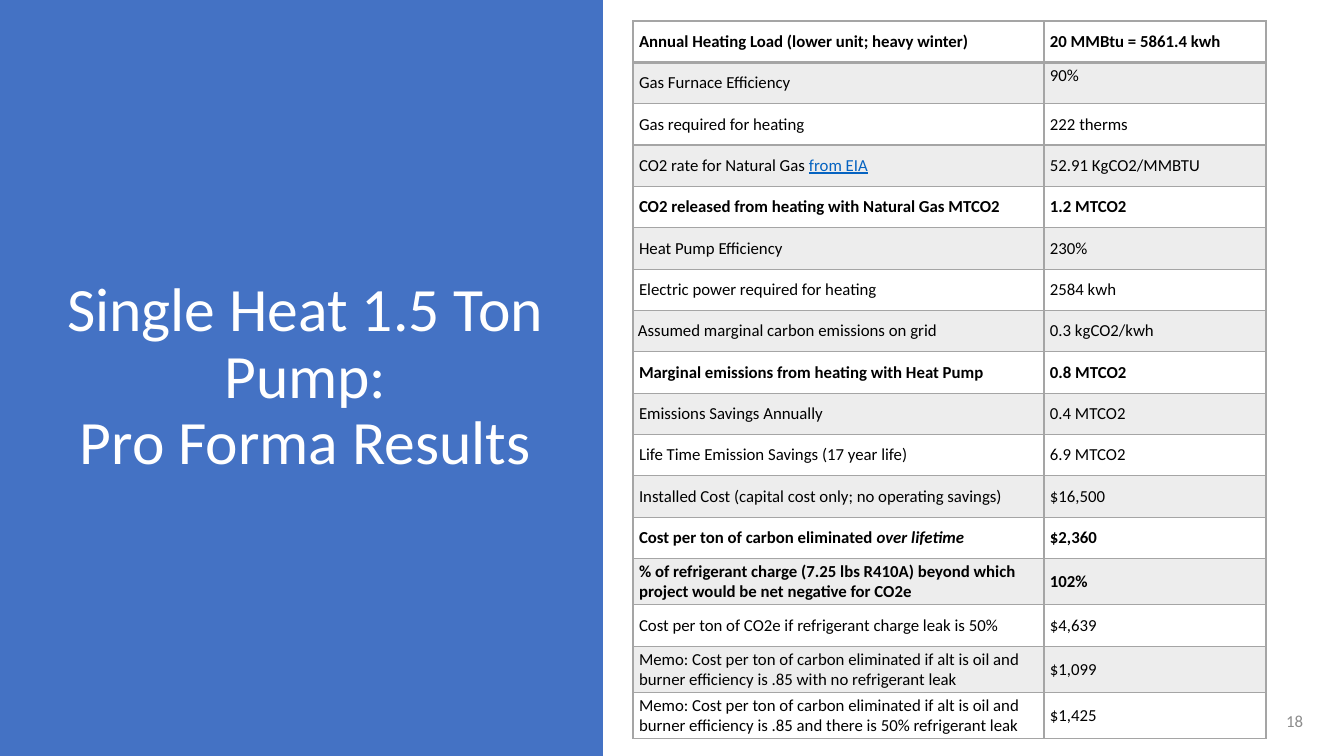
from dataclasses import dataclass

from lxml import etree
from pptx import Presentation
from pptx.dml.color import RGBColor
from pptx.enum.shapes import MSO_SHAPE
from pptx.enum.text import MSO_ANCHOR, PP_ALIGN
from pptx.oxml.ns import qn
from pptx.util import Emu, Pt

RECTANGLE = MSO_SHAPE.RECTANGLE
TOP, MIDDLE = MSO_ANCHOR.TOP, MSO_ANCHOR.MIDDLE
CENTER, RIGHT = PP_ALIGN.CENTER, PP_ALIGN.RIGHT
BLANK_LAYOUT = 6
EMU_PER_PX = 914400 / 100.8


@dataclass(frozen=True)
class Theme:
    font: str = "Calibri"
    panel: str = "4472C4"
    title: str = "FFFFFF"
    body: str = "000000"
    link: str = "0563C1"
    border: str = "A5A5A5"
    band: str = "EDEDED"
    page: str = "8C8C8C"
    title_size: int = 44
    body_size: int = 12


TITLE_LINES = ["Single Heat 1.5 Ton Pump:", "Pro Forma Results"]

# Each row: label runs as (text, style), value, bold
RESULTS = [
    ([("Annual Heating Load (lower unit; heavy winter)", "")], "20 MMBtu = 5861.4 kwh", True),
    ([("Gas Furnace Efficiency", "")], "90%", False),
    ([("Gas required for heating", "")], "222 therms", False),
    ([("CO2 rate for Natural Gas ", ""), ("from EIA", "link")], "52.91 KgCO2/MMBTU", False),
    ([("CO2 released from heating with Natural Gas MTCO2", "")], "1.2 MTCO2", True),
    ([("Heat Pump Efficiency", "")], "230%", False),
    ([("Electric power required for heating", "")], "2584 kwh", False),
    ([("Assumed marginal carbon emissions on grid", "")], "0.3 kgCO2/kwh", False),
    ([("Marginal emissions from heating with Heat Pump", "")], "0.8 MTCO2", True),
    ([("Emissions Savings Annually", "")], "0.4 MTCO2", False),
    ([("Life Time Emission Savings (17 year life)", "")], "6.9 MTCO2", False),
    ([("Installed Cost (capital cost only; no operating savings)", "")], "$16,500", False),
    ([("Cost per ton of carbon eliminated ", ""), ("over lifetime", "italic")], "$2,360", True),
    ([("% of refrigerant charge (7.25 lbs R410A) beyond which "
       "project would be net negative for CO2e", "")], "102%", True),
    ([("Cost per ton of CO2e if refrigerant charge leak is 50%", "")], "$4,639", False),
    ([("Memo: Cost per ton of carbon eliminated if alt is oil and "
       "burner efficiency is .85 with no refrigerant leak", "")], "$1,099", False),
    ([("Memo: Cost per ton of carbon eliminated if alt is oil and "
       "burner efficiency is .85 and there is 50% refrigerant leak", "")], "$1,425", False),
]
TOP_ALIGNED_VALUE_ROW = 1
TIGHT_LABEL_ROW = 7


def px(length):
    return Emu(round(length * EMU_PER_PX))


def set_attributes(target, values):
    for name, value in values.items():
        setattr(target, name, value)


class SlideBuilder:
    def __init__(self, slide, theme):
        self.slide = slide
        self.theme = theme

    def add_run(self, paragraph, text, size, color, **font_values):
        run = paragraph.add_run()
        run.text = text
        set_attributes(run.font, {"name": self.theme.font, "size": Pt(size), **font_values})
        run.font.color.rgb = RGBColor.from_string(color)

    def panel(self, left, top, width, height):
        shape = self.slide.shapes.add_shape(RECTANGLE, px(left), px(top), px(width), px(height))
        shape.shadow.inherit = False
        shape.fill.solid()
        shape.fill.fore_color.rgb = RGBColor.from_string(self.theme.panel)
        shape.line.fill.background()

    def text(self, box, lines, size, color, **paragraph_values):
        """Write one paragraph whose lines are split by line breaks."""
        frame = self.slide.shapes.add_textbox(*map(px, box)).text_frame
        set_attributes(frame, {"word_wrap": True, "vertical_anchor": MIDDLE})
        paragraph = frame.paragraphs[0]
        set_attributes(paragraph, paragraph_values)
        for index, line in enumerate(lines):
            if index:
                paragraph.add_line_break()
            self.add_run(paragraph, line, size, color)

    def border(self, cell, side, points):
        properties = cell._tc.get_or_add_tcPr()
        line = etree.SubElement(properties, qn(f"a:ln{side}"), w=str(Pt(points)))
        fill = etree.SubElement(line, qn("a:solidFill"))
        etree.SubElement(fill, qn("a:srgbClr"), val=self.theme.border)

    def cell(self, cell, runs, row, bold, anchor=MIDDLE, inset=6):
        theme = self.theme
        set_attributes(cell, {
            "margin_left": px(inset), "margin_right": px(inset),
            "margin_top": px(3), "margin_bottom": px(3),
            "vertical_anchor": anchor,
        })
        widths = {"L": 1, "R": 1, "T": 2 if row == 1 else 1, "B": 2 if row == 0 else 1}
        for side, points in widths.items():
            self.border(cell, side, points)
        if row % 2:
            cell.fill.solid()
            cell.fill.fore_color.rgb = RGBColor.from_string(theme.band)
        else:
            cell.fill.background()
        paragraph = cell.text_frame.paragraphs[0]
        for text, style in runs:
            is_link = style == "link"
            self.add_run(paragraph, text, theme.body_size, theme.link if is_link else theme.body,
                         bold=bold, italic=style == "italic", underline=is_link)

    def results_table(self, left, top, column_widths, height, results):
        table = self.slide.shapes.add_table(
            len(results), len(column_widths),
            px(left), px(top), px(sum(column_widths)), px(height)).table
        set_attributes(table, {"first_row": False, "horz_banding": False})
        for column, width in zip(table.columns, column_widths):
            column.width = px(width)
        for row, (label, value, bold) in enumerate(results):
            self.cell(table.cell(row, 0), label, row, bold,
                      inset=5 if row == TIGHT_LABEL_ROW else 6)
            self.cell(table.cell(row, 1), [(value, "")], row, bold,
                      anchor=TOP if row == TOP_ALIGNED_VALUE_ROW else MIDDLE)


def main():
    presentation = Presentation()
    set_attributes(presentation, {"slide_width": px(1344), "slide_height": px(756)})
    slide = presentation.slides.add_slide(presentation.slide_layouts[BLANK_LAYOUT])
    theme = Theme()
    builder = SlideBuilder(slide, theme)
    builder.panel(0, 0, 603, 756)
    builder.text((8, 71, 595, 615), TITLE_LINES, theme.title_size, theme.title,
                 alignment=CENTER, line_spacing=0.9)
    builder.results_table(633, 21, (411, 222), 703, RESULTS)
    builder.text((1011, 701, 302, 40), ["18"], theme.body_size, theme.page, alignment=RIGHT)
    presentation.save("out.pptx")


if __name__ == "__main__":
    main()
